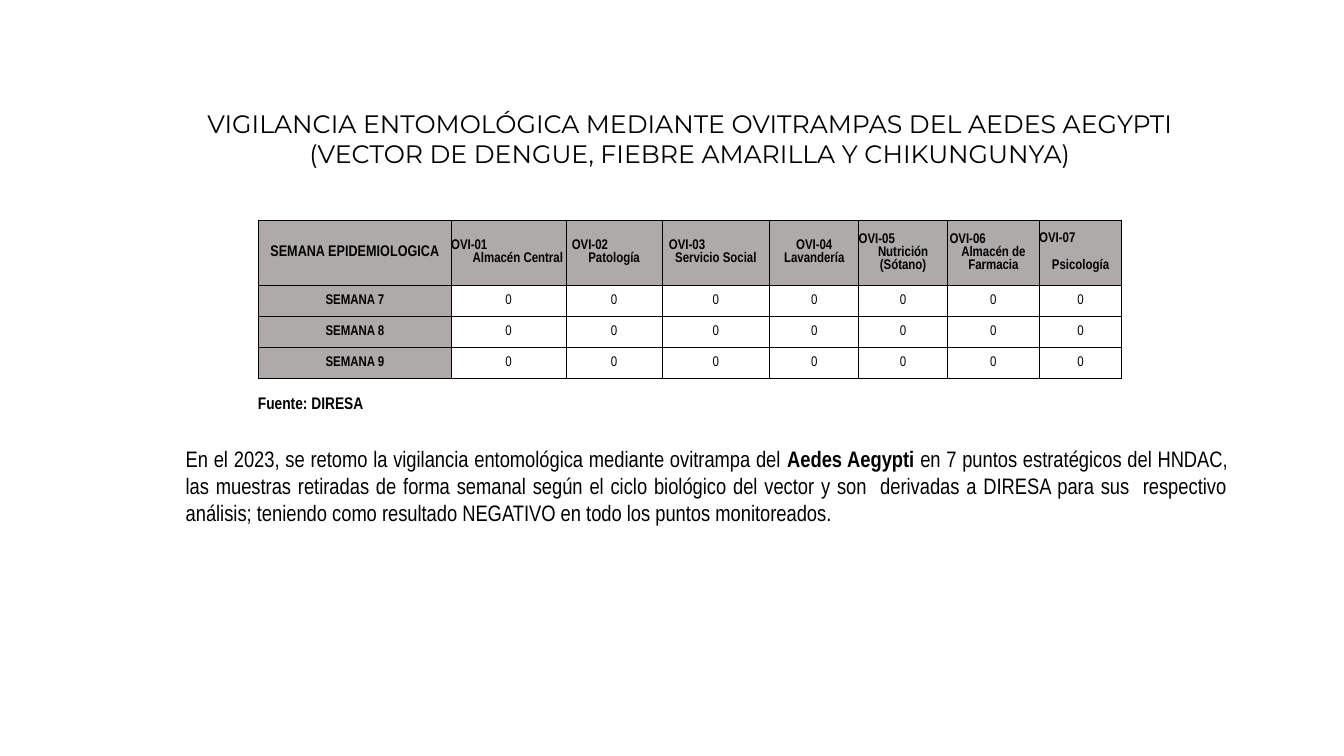
import pptx
import pptx.dml.color
import pptx.enum.text
import pptx.oxml
import pptx.oxml.ns
import pptx.util
from pptx.util import Cm, Pt

# Content
TITLE = ("VIGILANCIA ENTOMOLÓGICA MEDIANTE OVITRAMPAS DEL AEDES AEGYPTI "
         "(VECTOR DE DENGUE, FIEBRE AMARILLA Y CHIKUNGUNYA)")
CORNER = "SEMANA EPIDEMIOLOGICA"
# code, place, column width, code indent (None = centred), place indent, gap in points
TRAPS = [
    ("OVI-01", "Almacén Central", 2.9, 0, 0.46, 0),
    ("OVI-02", "Patología", 2.41, 0.14, 0, 0),
    ("OVI-03", "Servicio Social", 2.72, 0.18, 0, 0),
    ("OVI-04", "Lavandería", 2.24, None, 0, 0),
    ("OVI-05", "Nutrición (Sótano)", 2.24, 0, 0, 0),
    ("OVI-06", "Almacén de Farmacia", 2.31, 0.05, 0, 0),
    ("OVI-07", "Psicología", 2.08, 0, 0, 9.7),
]
WEEKS = [("SEMANA 7", [0] * 7), ("SEMANA 8", [0] * 7), ("SEMANA 9", [0] * 7)]
SOURCE = "Fuente: DIRESA"
SUMMARY = [
    ("En el 2023, se retomo la vigilancia entomológica mediante ovitrampa del ", False),
    ("Aedes Aegypti ", True),
    ("en 7 puntos estratégicos del HNDAC, las muestras retiradas de forma semanal "
     "según el ciclo biológico del vector y son  derivadas a DIRESA para sus  "
     "respectivo análisis; teniendo como resultado NEGATIVO en todo los puntos "
     "monitoreados.", False),
]

# Style
NARROW, DISPLAY = "Arial Narrow", "Montserrat"
BLACK, GREY = "000000", "AEAAAA"
WEEK_WIDTH, HEAD_HEIGHT, ROW_HEIGHT = 4.85, 1.65, 0.78
ALIGN = pptx.enum.text.PP_ALIGN


def color(value):
    return pptx.dml.color.RGBColor.from_string(value)


def write(para, spans, size, align, font=NARROW):
    para.alignment = align
    for text, bold in spans:
        span = para.add_run()
        span.text = text
        span.font.name = font
        span.font.size = Pt(size)
        span.font.bold = bold
        span.font.color.rgb = color(BLACK)


def add_text(page, frame, spans, size, align, font=NARROW, wrap=True):
    box = page.shapes.add_textbox(*[Cm(length) for length in frame])
    box.text_frame.word_wrap = wrap
    box.text_frame.auto_size = pptx.enum.text.MSO_AUTO_SIZE.SHAPE_TO_FIT_TEXT
    write(box.text_frame.paragraphs[0], spans, size, align, font)


def style_cell(cell, fill):
    cell.margin_left = cell.margin_right = cell.margin_top = cell.margin_bottom = 0
    cell.vertical_anchor = pptx.enum.text.MSO_ANCHOR.MIDDLE
    properties = cell._tc.get_or_add_tcPr()
    for side in ("lnL", "lnR", "lnT", "lnB"):
        properties.append(pptx.oxml.parse_xml(
            f'<a:{side} {pptx.oxml.ns.nsdecls("a")} w="{Pt(0.5)}"><a:solidFill>'
            f'<a:srgbClr val="{BLACK}"/></a:solidFill></a:{side}>'))
    if fill:
        cell.fill.solid()
        cell.fill.fore_color.rgb = color(fill)
    else:
        cell.fill.background()


def indent(para, length):
    para._p.get_or_add_pPr().set("marL", str(Cm(length)))


def write_trap(cell, code, place, code_indent, place_indent, gap):
    first = cell.text_frame.paragraphs[0]
    second = cell.text_frame.add_paragraph()
    write(first, [(code, True)], 10, ALIGN.CENTER if code_indent is None else ALIGN.LEFT)
    write(second, [(place, True)], 10, ALIGN.CENTER)
    indent(first, code_indent or 0)
    indent(second, place_indent)
    second.space_before = Pt(gap)


def add_trap_table(page):
    widths = [WEEK_WIDTH] + [trap[2] for trap in TRAPS]
    heights = [HEAD_HEIGHT] + [ROW_HEIGHT] * len(WEEKS)
    table = page.shapes.add_table(len(heights), len(widths), Cm(6.52), Cm(5.54),
                                  Cm(sum(widths)), Cm(sum(heights))).table
    table.first_row = table.horz_banding = False
    for column, width in zip(table.columns, widths):
        column.width = Cm(width)
    for row, height in zip(table.rows, heights):
        row.height = Cm(height)
    for r in range(len(heights)):
        for c in range(len(widths)):
            style_cell(table.cell(r, c), GREY if r == 0 or c == 0 else None)

    # Header row
    write(table.cell(0, 0).text_frame.paragraphs[0], [(CORNER, True)], 11, ALIGN.CENTER)
    for c, (code, place, _, code_indent, place_indent, gap) in enumerate(TRAPS, 1):
        write_trap(table.cell(0, c), code, place, code_indent, place_indent, gap)

    # Weekly counts
    for r, (week, counts) in enumerate(WEEKS, 1):
        for c, value in enumerate([week] + counts):
            write(table.cell(r, c).text_frame.paragraphs[0],
                  [(str(value), c == 0)], 10, ALIGN.CENTER)


def main():
    deck = pptx.Presentation()
    deck.slide_width, deck.slide_height = Cm(33.87), Cm(19.05)
    page = deck.slides.add_slide(deck.slide_layouts[6])
    add_trap_table(page)
    add_text(page, (4, 2.6, 26.77, 1.8), [(TITLE, False)], 18, ALIGN.CENTER, DISPLAY)
    add_text(page, (6.25, 9.78, 3.3, 0.76), [(SOURCE, True)], 12, ALIGN.LEFT, wrap=False)
    add_text(page, (4.43, 11.1, 26.77, 2.31), SUMMARY, 16, ALIGN.JUSTIFY)
    deck.save("out.pptx")


if __name__ == "__main__":
    main()
